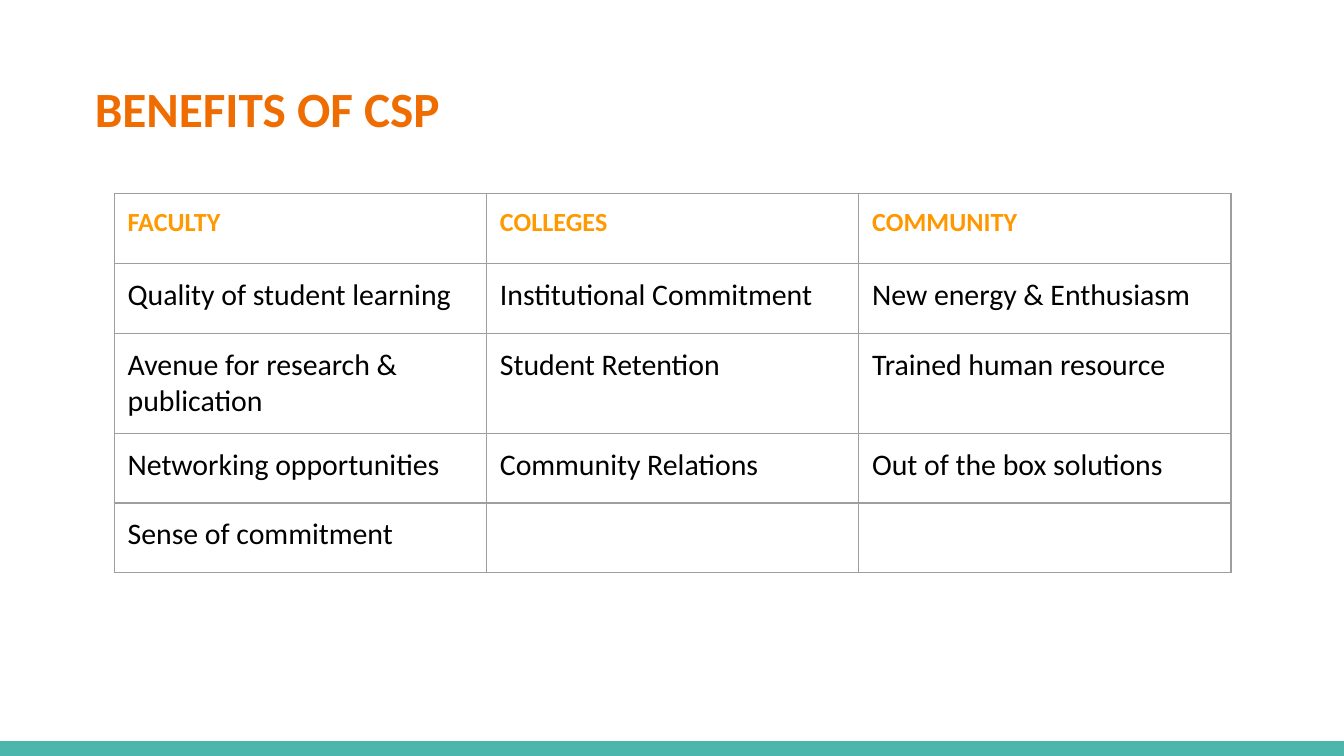
"""Build the slide on the benefits of CSP."""
from lxml.etree import SubElement as Sub
from pptx import Presentation
from pptx.dml.color import RGBColor as RGB
from pptx.enum.shapes import MSO_SHAPE as Shape
from pptx.enum.text import MSO_ANCHOR as Anchor, MSO_AUTO_SIZE as Fit, PP_ALIGN as Align
from pptx.oxml.ns import qn
from pptx.util import Inches, Pt


def style(font, size, color, bold):
    look = {"name": "Calibri", "size": Pt(size), "bold": bold}
    for key, value in look.items():
        setattr(font, key, value)
    font.color.rgb = RGB.from_string(color)


deck = Presentation()
deck.slide_width, deck.slide_height = Inches(10), Inches(10) * 9 // 16
slide = deck.slides.add_slide(deck.slide_layouts[5])
pad = {f"margin_{side}": Inches(0.1) for side in ("left", "top", "right", "bottom")}

tall = Inches(0.11)
bar = slide.shapes.add_shape(
    Shape.RECTANGLE, 0, deck.slide_height - tall, deck.slide_width, tall
)
bar.shadow.inherit = False
bar.fill.solid()
bar.fill.fore_color.rgb = RGB.from_string("4DB6AC")
bar.line.fill.background()

title = slide.shapes.title
place = {"left": 0, "top": 0.48, "width": 3.98, "height": 0.77}
for key, value in place.items():
    setattr(title, key, Inches(value))
frame = title.text_frame
frame.text = "BENEFITS OF CSP"
setup = {"word_wrap": True, "auto_size": Fit.NONE, "vertical_anchor": Anchor.TOP, **pad}
for key, value in setup.items():
    setattr(frame, key, value)
frame.paragraphs[0].alignment = Align.CENTER
style(frame.paragraphs[0].runs[0].font, 26.4, "EF6C00", True)

rows = [
    ("FACULTY", "COLLEGES", "COMMUNITY"),
    ("Quality of student learning", "Institutional Commitment", "New energy & Enthusiasm"),
    ("Avenue for research & publication", "Student Retention", "Trained human resource"),
    ("Networking opportunities", "Community Relations", "Out of the box solutions"),
    ("Sense of commitment", "", ""),
]
heads = ("FF9900", "FF9900", "FF9800")
wide, high = Inches(2.77), Inches(0.52)
grid = slide.shapes.add_table(
    len(rows), len(heads), Inches(0.85), Inches(1.44), len(heads) * wide, len(rows) * high
).table
grid.first_row = grid.horz_banding = False
for col in grid.columns:
    col.width = wide
for r, row in enumerate(rows):
    grid.rows[r].height = high
    for c, text in enumerate(row):
        cell = grid.cell(r, c)
        for key, value in pad.items():
            setattr(cell, key, value)
        props = cell._tc.get_or_add_tcPr()
        for edge in ("lnL", "lnR", "lnT", "lnB"):
            line = Sub(props, qn(f"a:{edge}"), w=str(Pt(0.75)))
            Sub(Sub(line, qn("a:solidFill")), qn("a:srgbClr"), val="9E9E9E")
        cell.fill.background()
        cell.text = text
        size, color = (16, "000000") if r else (14, heads[c])
        for run in cell.text_frame.paragraphs[0].runs:
            style(run.font, size, color, r == 0)

deck.save("out.pptx")
